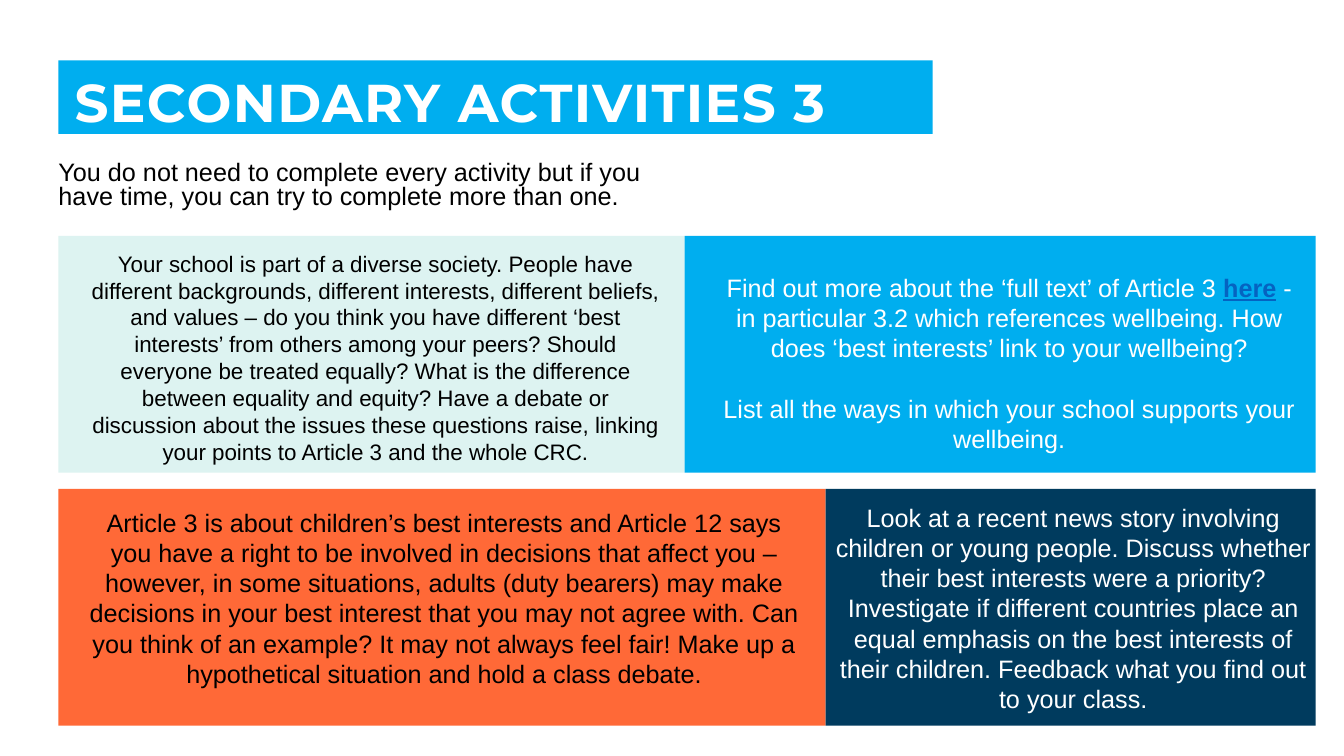
from pptx import Presentation
from pptx import util as u
from pptx.dml.color import RGBColor
from pptx.enum import shapes, text

# Grid, in inches
LEFT, RIGHT = 0.58, 13.05
ROWS = (2.34, 4.85)
HIGH = 2.35
SPLITS = (6.79, 8.19)

# Colours
SKY, MINT, CORAL, NAVY = "00AEEF", "DDF3F1", "FF6937", "003B5E"
WHITE, BLACK, LINK = "FFFFFF", "000000", "0563C1"

DEBATE = (
    "Your school is part of a diverse society. People have different backgrounds, "
    "different interests, different beliefs, and values – do you think you have "
    "different ‘best interests’ from others among your peers? Should everyone be "
    "treated equally? What is the difference between equality and equity? Have a "
    "debate or discussion about the issues these questions raise, linking your "
    "points to Article 3 and the whole CRC."
)
NEWS = (
    "Look at a recent news story involving children or young people. Discuss "
    "whether their best interests were a priority? Investigate if different "
    "countries place an equal emphasis on the best interests of their children. "
    "Feedback what you find out to your class."
)
FAIR = (
    "Article 3 is about children’s best interests and Article 12 says you have a "
    "right to be involved in decisions that affect you – however, in some "
    "situations, adults (duty bearers) may make decisions in your best interest "
    "that you may not agree with. Can you think of an example? It may not always "
    "feel fair! Make up a hypothetical situation and hold a class debate."
)
FIND = (
    "Find out more about the ‘full text’ of Article 3 ",
    "here",
    " - in particular 3.2 which references wellbeing. How does ‘best interests’ "
    "link to your wellbeing?",
)
LIST = "List all the ways in which your school supports your wellbeing."
INTRO = (
    "You do not need to complete every activity but if you have time, "
    "you can try to complete more than one."
)


def paint(color, value):
    color.rgb = RGBColor.from_string(value)


def style(run, size, color, face="Arial", bold=False):
    run.font.name, run.font.size, run.font.bold = face, u.Pt(size), bold
    paint(run.font.color, color)


def inset(frame, *sides):
    (frame.margin_left, frame.margin_top,
     frame.margin_right, frame.margin_bottom) = map(u.Inches, sides)


def panel(slide, box, fill):
    """Add a plain filled rectangle."""
    shape = slide.shapes.add_shape(shapes.MSO_SHAPE.RECTANGLE, *map(u.Inches, box))
    shape.shadow.inherit = False
    shape.fill.solid()
    paint(shape.fill.fore_color, fill)
    shape.line.fill.background()
    return shape


def label(slide, box, words, size, color, align=text.PP_ALIGN.CENTER):
    """Add a wrapped text box and return its frame."""
    frame = slide.shapes.add_textbox(*map(u.Inches, box)).text_frame
    frame.word_wrap = True
    frame.text = words
    for para in frame.paragraphs:
        para.alignment = align
        for run in para.runs:
            style(run, size, color)
    return frame


def title(slide, box, words):
    """Add the heading bar."""
    frame = panel(slide, box, SKY).text_frame
    frame.word_wrap = True
    frame.vertical_anchor = text.MSO_ANCHOR.MIDDLE
    inset(frame, 0.16, 0.16, 0.12, 0)
    frame.text = words
    para = frame.paragraphs[0]
    para.alignment = text.PP_ALIGN.LEFT
    para.line_spacing = 0.9
    style(para.runs[0], 38, WHITE, "Montserrat", True)
    para.runs[0].font._element.set("spc", "100")


def research(slide, box):
    """Add the task with the underlined word and a second paragraph."""
    frame = label(slide, box, "\n".join(("", LIST)), 18, WHITE)
    first, last = frame.paragraphs
    for words in FIND:
        run = first.add_run()
        run.text = words
        style(run, 18, WHITE)
    here = first.runs[1]
    style(here, 18, LINK, bold=True)
    here.font.underline = True
    last.space_before = u.Pt(21.6)


def main():
    prs = Presentation()
    prs.slide_width, prs.slide_height = u.Inches(13.33), u.Inches(7.5)
    slide = prs.slides.add_slide(prs.slide_layouts[6])

    # Heading and introduction
    title(slide, (LEFT, 0.6, 8.67, 0.73), "SECONDARY ACTIVITIES 3")
    intro = label(slide, (LEFT, 1.56, SPLITS[0] - LEFT, 0.62), INTRO, 18, BLACK,
                  text.PP_ALIGN.LEFT)
    inset(intro, 0, 0.05, 0.1, 0.05)
    intro.paragraphs[0].line_spacing = 0.8

    # Two rows of panels, each split at its own column
    for top, split, fills in zip(ROWS, SPLITS, ((MINT, SKY), (CORAL, NAVY))):
        panel(slide, (LEFT, top, split - LEFT, HIGH), fills[0])
        panel(slide, (split, top, RIGHT - split, HIGH), fills[1])

    # Activity texts
    label(slide, (0.79, 2.43, 5.87, 2.26), DEBATE, 16, BLACK)
    research(slide, (7.03, 2.65, 5.96, 1.92))
    label(slide, (0.79, 4.98, 7.23, 1.92), FAIR, 18, BLACK)
    label(slide, (8.18, 4.93, 4.93, 2.22), NEWS, 18, WHITE)

    prs.save("out.pptx")


if __name__ == "__main__":
    main()
